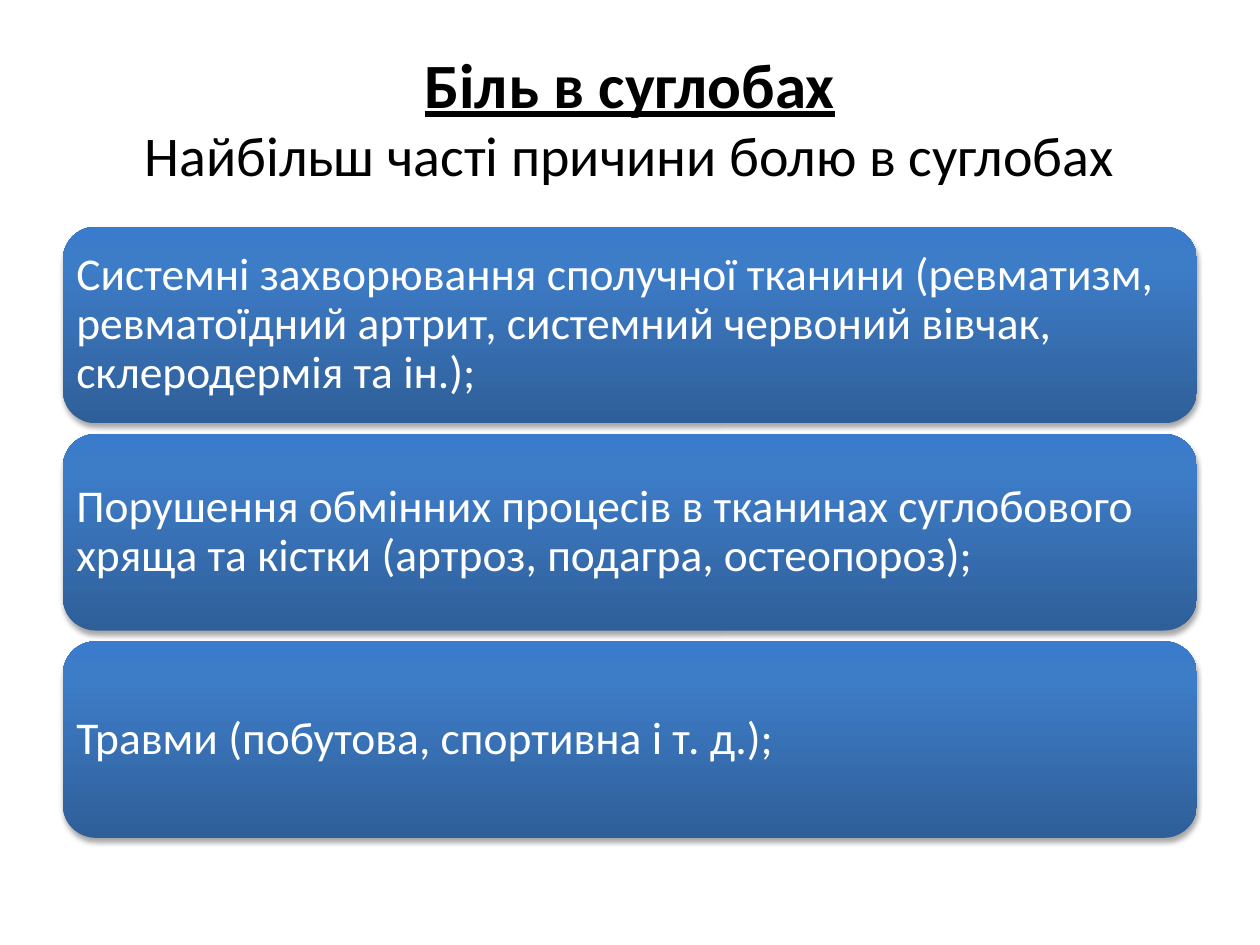
from copy import deepcopy

from lxml import etree
from pptx import Presentation
from pptx.dml.color import RGBColor
from pptx.enum import shapes, text
from pptx.oxml import ns
from pptx.util import Inches, Pt

BLACK = RGBColor(0x00, 0x00, 0x00)
WHITE = RGBColor(0xFF, 0xFF, 0xFF)
DARK_BLUE = RGBColor(0x2F, 0x5F, 0x99)
MID_BLUE = RGBColor(0x3D, 0x7C, 0xC7)
BRIGHT_BLUE = RGBColor(0x3A, 0x7C, 0xCB)

GRADIENT = [(0, DARK_BLUE), (0.8, MID_BLUE), (1, BRIGHT_BLUE)]
TITLE_FORMAT = {"name": "Calibri", "size": Pt(36), "bold": True, "underline": True}
SUBTITLE_FORMAT = {"name": "Calibri", "size": Pt(32), "bold": False, "underline": False}
CAUSE_FORMAT = {"name": "Calibri", "size": Pt(26)}

LEFT, WIDTH = 0.5, 9
CAUSE_TOP, CAUSE_HEIGHT, CAUSE_STEP = 1.8, 1.56, 1.645
CAUSES = [
    "Системні захворювання сполучної тканини (ревматизм, ревматоїдний артрит, "
    "системний червоний вівчак, склеродермія та ін.);",
    "Порушення обмінних процесів в тканинах суглобового хряща та кістки "
    "(артроз, подагра, остеопороз);",
    "Травми (побутова, спортивна і т. д.);",
]


def set_attributes(target, values):
    for name, value in values.items():
        setattr(target, name, value)


def add_run(paragraph, wording, font_format, color):
    run = paragraph.add_run()
    run.text = wording
    set_attributes(run.font, font_format)
    run.font.color.rgb = color


def add_title(slide):
    title = slide.shapes.title
    set_attributes(title, {"left": Inches(LEFT), "top": Inches(0.3),
                           "width": Inches(WIDTH), "height": Inches(1.25)})
    title.text_frame.vertical_anchor = text.MSO_ANCHOR.MIDDLE
    paragraph = title.text_frame.paragraphs[0]
    paragraph.alignment = text.PP_ALIGN.CENTER
    add_run(paragraph, "Біль в суглобах", TITLE_FORMAT, BLACK)
    paragraph.add_line_break()
    line_break = paragraph._p.find(ns.qn("a:br"))
    etree.SubElement(line_break, ns.qn("a:rPr"), sz="3600")
    add_run(paragraph, "Найбільш часті причини болю в суглобах", SUBTITLE_FORMAT, BLACK)


def fill_gradient(shape):
    shape.fill.gradient()
    shape.fill.gradient_angle = 90
    stop_list = shape._element.spPr.find(".//" + ns.qn("a:gsLst"))
    stop_list.append(deepcopy(stop_list[-1]))
    for stop, (position, color) in zip(shape.fill.gradient_stops, GRADIENT):
        stop.position = position
        stop.color.rgb = color


def add_shadow(shape):
    shape.shadow.inherit = False
    effects = shape._element.spPr.find(ns.qn("a:effectLst"))
    shadow = etree.SubElement(effects, ns.qn("a:outerShdw"), blurRad=str(Pt(3.1)),
                              dist=str(Pt(1.8)), dir="5400000", rotWithShape="0")
    color = etree.SubElement(shadow, ns.qn("a:srgbClr"), val=str(BLACK))
    etree.SubElement(color, ns.qn("a:alpha"), val="35000")


def add_cause(slide, top, wording):
    shape = slide.shapes.add_shape(
        shapes.MSO_SHAPE.ROUNDED_RECTANGLE,
        Inches(LEFT), Inches(top), Inches(WIDTH), Inches(CAUSE_HEIGHT))
    fill_gradient(shape)
    shape.line.fill.background()
    add_shadow(shape)
    frame = shape.text_frame
    set_attributes(frame, {"word_wrap": True, "vertical_anchor": text.MSO_ANCHOR.MIDDLE})
    for side in ("left", "top", "right", "bottom"):
        setattr(frame, f"margin_{side}", Inches(0.03))
    paragraph = frame.paragraphs[0]
    set_attributes(paragraph, {"alignment": text.PP_ALIGN.LEFT, "line_spacing": 0.9})
    add_run(paragraph, wording, CAUSE_FORMAT, WHITE)


def main():
    presentation = Presentation()
    set_attributes(presentation, {"slide_width": Inches(10), "slide_height": Inches(7.5)})
    slide = presentation.slides.add_slide(presentation.slide_layouts[5])
    add_title(slide)
    for index, wording in enumerate(CAUSES):
        add_cause(slide, CAUSE_TOP + index * CAUSE_STEP, wording)
    presentation.save("out.pptx")


if __name__ == "__main__":
    main()
